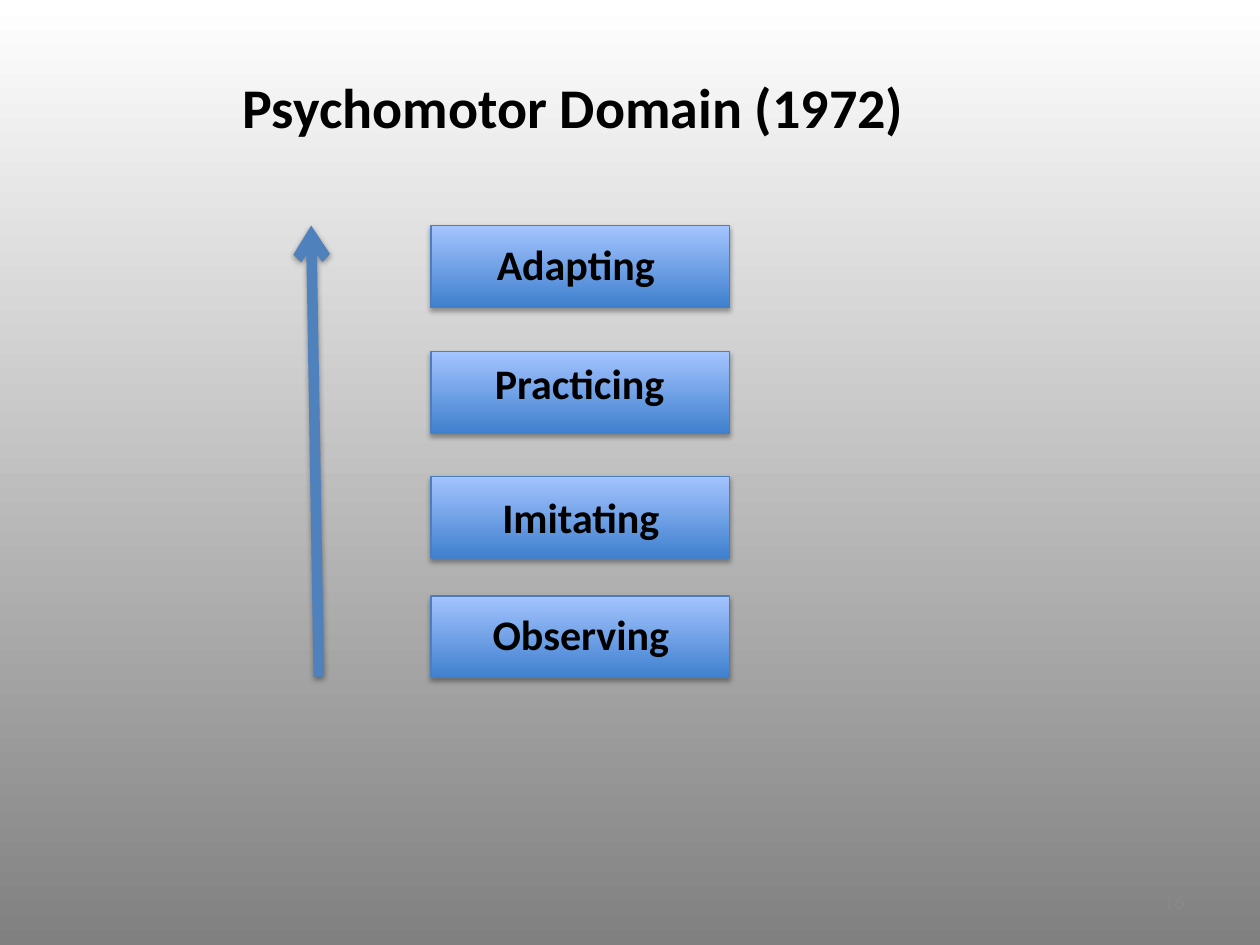
"""Build a slide showing the four steps of the psychomotor domain."""
from dataclasses import dataclass

from lxml.etree import SubElement
from pptx import Presentation
from pptx.dml.color import RGBColor as Color
from pptx.enum.shapes import MSO_CONNECTOR as Connector, MSO_SHAPE as Preset
from pptx.enum.text import MSO_ANCHOR as Anchor, MSO_AUTO_SIZE as AutoSize, PP_ALIGN as Align
from pptx.oxml.ns import qn
from pptx.util import Inches, Pt

WIDTH, HEIGHT = Inches(10), Inches(7.5)


@dataclass(frozen=True)
class Theme:
    font: str = "Calibri"
    text: str = "000000"
    number: str = "898989"
    background: tuple = ("808080", "FFFFFF")
    box: tuple = ("3F80CE", "A4C4FF")
    outline: str = "4B7EBC"
    arrow: str = "4F81BD"
    title_size: int = 32
    label_size: int = 24
    number_size: int = 12


@dataclass(frozen=True)
class Area:
    left: float
    top: float
    width: float
    height: float

    def lengths(self) -> tuple:
        return (
            int(WIDTH * self.left / 10),
            int(HEIGHT * self.top / 7.5),
            int(WIDTH * self.width / 10),
            int(HEIGHT * self.height / 7.5),
        )


@dataclass(frozen=True)
class Step:
    label: str
    box_top: float
    label_left: float
    label_top: float


THEME = Theme()
STEPS = (
    Step("Adapting", 1.79, 3.01, 1.84),
    Step("Practicing", 2.79, 3.04, 2.79),
    Step("Imitating", 3.78, 3.05, 3.85),
    Step("Observing", 4.73, 3.05, 4.78),
)


def paint_gradient(fill, colors: tuple) -> None:
    fill.gradient()
    fill.gradient_angle = 90
    for stop, color in zip(fill.gradient_stops, colors):
        stop.color.rgb = Color.from_string(color)


def cast_shadow(shape, distance: float, opacity: int) -> None:
    effects = SubElement(shape._element.spPr, qn("a:effectLst"))
    shadow = SubElement(
        effects, qn("a:outerShdw"), blurRad=str(Pt(3.1)), dist=str(Pt(distance)),
        dir="5400000", rotWithShape="0",
    )
    black = SubElement(shadow, qn("a:srgbClr"), val="000000")
    SubElement(black, qn("a:alpha"), val=str(opacity * 1000))


def write(frame, text: str, size: int, color: str = THEME.text,
          bold: bool = True, align: Align = Align.CENTER) -> None:
    frame.word_wrap = True
    paragraph = frame.paragraphs[0]
    paragraph.alignment = align
    run = paragraph.add_run()
    run.text = text
    run.font.name = THEME.font
    run.font.size = Pt(size)
    run.font.bold = bold
    run.font.color.rgb = Color.from_string(color)


def add_title(slide, text: str, area: Area) -> None:
    title = slide.shapes.title
    title.left, title.top, title.width, title.height = area.lengths()
    title.text_frame.vertical_anchor = Anchor.MIDDLE
    write(title.text_frame, text, THEME.title_size)


def add_box(slide, step: Step) -> None:
    area = Area(3.42, step.box_top, 2.37, 0.65)
    box = slide.shapes.add_shape(Preset.RECTANGLE, *area.lengths())
    paint_gradient(box.fill, THEME.box)
    box.line.color.rgb = Color.from_string(THEME.outline)
    box.line.width = Pt(0.75)
    cast_shadow(box, 1.8, 35)


def add_label(slide, step: Step) -> None:
    area = Area(step.label_left, step.label_top, 3.12, 0.5)
    frame = slide.shapes.add_textbox(*area.lengths()).text_frame
    frame.auto_size = AutoSize.SHAPE_TO_FIT_TEXT
    write(frame, step.label, THEME.label_size)


def add_arrow(slide, area: Area) -> None:
    left, top, width, height = area.lengths()
    arrow = slide.shapes.add_connector(
        Connector.STRAIGHT, left + width, top + height, left, top)
    arrow.line.color.rgb = Color.from_string(THEME.arrow)
    arrow.line.width = Pt(6)
    SubElement(arrow.line._get_or_add_ln(), qn("a:tailEnd"), type="arrow")
    cast_shadow(arrow, 1.6, 38)


def add_number(slide, text: str, area: Area) -> None:
    frame = slide.shapes.add_textbox(*area.lengths()).text_frame
    frame.vertical_anchor = Anchor.MIDDLE
    write(frame, text, THEME.number_size, THEME.number, False, Align.RIGHT)


def main() -> None:
    presentation = Presentation()
    presentation.slide_width, presentation.slide_height = WIDTH, HEIGHT
    slide = presentation.slides.add_slide(presentation.slide_layouts[5])
    paint_gradient(slide.background.fill, THEME.background)
    add_title(slide, "Psychomotor Domain (1972)", Area(0.3, 0.04, 8.5, 1.61))
    for step in reversed(STEPS):
        add_box(slide, step)
    for step in STEPS:
        add_label(slide, step)
    add_arrow(slide, Area(2.47, 1.79, 0.06, 3.58))
    add_number(slide, "16", Area(7.17, 6.95, 2.33, 0.4))
    presentation.save("out.pptx")


if __name__ == "__main__":
    main()
